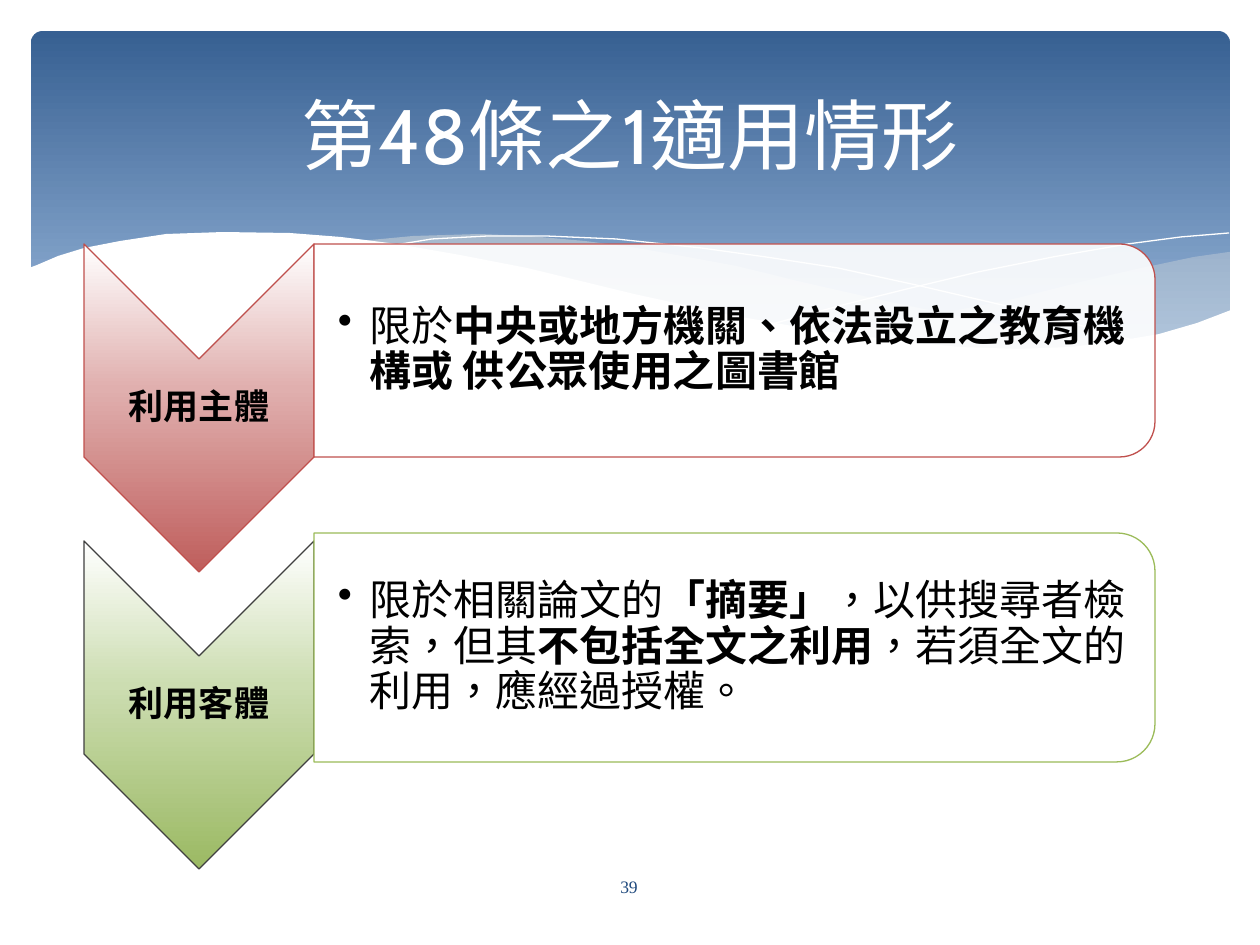
from lxml import etree
from pptx import Presentation
from pptx.dml.color import RGBColor
from pptx.enum.lang import MSO_LANGUAGE_ID
from pptx.enum.shapes import MSO_SHAPE
from pptx.enum.text import MSO_ANCHOR, PP_ALIGN
from pptx.oxml.ns import qn
from pptx.util import Emu, Pt

EMU_PER_PX = 914400 / 126
ROUND_RECT = MSO_SHAPE.ROUNDED_RECTANGLE
CHEVRON = MSO_SHAPE.CHEVRON
CARD = MSO_SHAPE.ROUND_2_SAME_RECTANGLE
MIDDLE = MSO_ANCHOR.MIDDLE
LEFT, CENTER = PP_ALIGN.LEFT, PP_ALIGN.CENTER
CHINESE = MSO_LANGUAGE_ID.TRADITIONAL_CHINESE

WHITE = RGBColor(0xFF, 0xFF, 0xFF)
BLACK = RGBColor(0x00, 0x00, 0x00)
NAVY = RGBColor(0x1F, 0x49, 0x7D)
BANNER_DARK = RGBColor(0x37, 0x60, 0x92)
BANNER_LIGHT = RGBColor(0x95, 0xB3, 0xD7)
CREAM = RGBColor(0xEE, 0xEC, 0xE1)
RED = RGBColor(0xC0, 0x50, 0x4D)
RED_MID = RGBColor(0xE0, 0xAF, 0xAE)
RED_DEEP = RGBColor(0xBF, 0x5E, 0x5C)
GREEN = RGBColor(0x9B, 0xBB, 0x59)
GREEN_MID = RGBColor(0xCC, 0xDD, 0xB1)
GREEN_DEEP = RGBColor(0x9B, 0xB9, 0x63)
CHARCOAL = RGBColor(0x40, 0x40, 0x40)

RIGHT_WAVE = [
    (1229, 252), (1194, 257), (1142, 268), (1085, 281), (1014, 299), (949, 312),
    (890, 324), (833, 334), (871, 339), (922, 345), (984, 349), (1052, 350),
    (1110, 344), (1160, 334), (1196, 324), (1230, 311), (1230, 252)]
MIDDLE_WAVE = [
    (1125, 344), (1055, 334), (976, 320), (890, 302), (793, 280), (736, 266),
    (682, 256), (631, 247), (585, 241), (529, 236), (479, 234), (413, 236),
    (360, 241), (431, 251), (509, 266), (566, 280), (668, 302), (757, 321),
    (838, 335), (910, 345), (989, 350), (1043, 351), (1092, 348)]
FALLING_CURVE = [
    (389, 246), (432, 239), (488, 236), (546, 236), (616, 239), (701, 248),
    (766, 257), (838, 268), (916, 285), (1002, 305), (1094, 329), (1143, 343)]
RISING_CURVE = [
    (772, 324), (847, 304), (907, 289), (978, 272), (1053, 257), (1128, 244),
    (1181, 237), (1229, 233)]
WHITE_WAVE = [
    (1231, 310), (1197, 323), (1159, 334), (1118, 341), (1071, 347), (1019, 349),
    (959, 347), (892, 340), (815, 330), (730, 315), (634, 294), (527, 268),
    (460, 255), (397, 244), (341, 237), (290, 233), (223, 232), (166, 234),
    (120, 241), (84, 248), (58, 256), (37, 265), (29, 268), (29, 415), (1231, 415)]


def px(length):
    """Turn pixels into EMU."""
    return Emu(round(length * EMU_PER_PX))


def set_solid(shape, color, opacity=100):
    """Fill a shape with one colour at a percentage of opacity."""
    shape.fill.solid()
    shape.fill.fore_color.rgb = color
    if opacity < 100:
        color_element = shape.element.spPr.find(qn("a:solidFill"))[0]
        etree.SubElement(color_element, qn("a:alpha"), val=str(opacity * 1000))


def set_gradient(shape, stops):
    """Fill a shape with a gradient that runs from top to bottom."""
    shape.fill.gradient()
    gradient = shape.element.spPr.find(qn("a:gradFill"))
    gradient.set("rotWithShape", "0")
    gradient.find(qn("a:lin")).set("ang", "5400000")
    stop_list = gradient.find(qn("a:gsLst"))
    for stop in list(stop_list):
        stop_list.remove(stop)
    for position, color in stops:
        stop = etree.SubElement(stop_list, qn("a:gs"), pos=str(position * 1000))
        etree.SubElement(stop, qn("a:srgbClr"), val=str(color))


def set_outline(shape, color=None, width=0.75):
    """Give a shape an outline, or none, and no shadow."""
    shape.shadow.inherit = False
    if color is None:
        shape.line.fill.background()
    else:
        shape.line.color.rgb = color
        shape.line.width = Pt(width)


def add_turned_shape(slide, kind, left, top, width, height):
    """Add a shape turned by 90 degrees that covers the given area."""
    shift = (width - height) / 2
    shape = slide.shapes.add_shape(
        kind, px(left + shift), px(top - shift), px(height), px(width))
    shape.rotation = 90
    return shape


def add_outline_path(slide, points, closed):
    """Add a freeform through the points."""
    builder = slide.shapes.build_freeform(*points[0], scale=EMU_PER_PX)
    builder.add_line_segments(points[1:], close=closed)
    return builder.convert_to_shape()


def add_wave(slide, points, color, opacity=100):
    """Add a filled wave."""
    wave = add_outline_path(slide, points, True)
    set_solid(wave, color, opacity)
    set_outline(wave)


def add_curve(slide, points):
    """Add a white hairline curve."""
    curve = add_outline_path(slide, points, False)
    curve.fill.background()
    set_outline(curve, WHITE, 0)


def write_text(shape, runs, size, color, align=CENTER, font="Cabin", spacing=None):
    """Write one paragraph of (text, bold) runs and return it."""
    frame = shape.text_frame
    frame.word_wrap = True
    frame.vertical_anchor = MIDDLE
    paragraph = frame.paragraphs[0]
    paragraph.alignment = align
    paragraph.line_spacing = spacing
    for text, bold in runs:
        run = paragraph.add_run()
        run.text = text
        run.font.name = font
        run.font.size = Pt(size)
        run.font.bold = bold
        run.font.color.rgb = color
        run.font.language_id = CHINESE
    return paragraph


def add_text_box(slide, left, top, width, height, insets):
    """Add a text box with left, top, right and bottom insets."""
    box = slide.shapes.add_textbox(px(left), px(top), px(width), px(height))
    frame = box.text_frame
    (frame.margin_left, frame.margin_top,
     frame.margin_right, frame.margin_bottom) = map(px, insets)
    return box


def add_bullet(paragraph):
    """Give a paragraph a hanging round bullet."""
    properties = paragraph._p.get_or_add_pPr()
    properties.set("marL", "228600")
    properties.set("indent", "-228600")
    etree.SubElement(properties, qn("a:buChar"), char="•")


def add_chevron(slide, top, label, stops, line_color):
    """Add a labelled chevron that points down."""
    chevron = add_turned_shape(slide, CHEVRON, 84, top, 230, 328)
    set_gradient(chevron, stops)
    set_outline(chevron, line_color)
    box = add_text_box(slide, 84, top + 115, 230, 98, (1, 1, 1, 1))
    write_text(box, [(label, True)], 20, BLACK, spacing=0.9)


def add_card(slide, top, height, runs, line_color):
    """Add a card, rounded on the right, with one bullet."""
    card = add_turned_shape(slide, CARD, 314, top, 841, height)
    set_solid(card, WHITE, 90)
    set_outline(card, line_color)
    box = add_text_box(slide, 314, top + 10, 830, height - 20, (24, 2, 2, 2))
    add_bullet(write_text(box, runs, 24, BLACK, LEFT, spacing=0.9))


def add_banner(slide):
    """Add the blue banner with its waves."""
    banner = slide.shapes.add_shape(ROUND_RECT, px(31), px(31), px(1199), px(340))
    banner.adjustments[0] = 0.034
    set_gradient(banner, [(0, BANNER_DARK), (90, BANNER_LIGHT)])
    set_outline(banner)
    add_wave(slide, RIGHT_WAVE, CREAM, 29)
    add_wave(slide, MIDDLE_WAVE, CREAM, 40)
    add_curve(slide, FALLING_CURVE)
    add_curve(slide, RISING_CURVE)
    add_wave(slide, WHITE_WAVE, WHITE)


def add_title(slide, text):
    """Place the title in front of the banner."""
    title = slide.shapes.title
    title.left, title.top, title.width, title.height = map(px, (63, 47, 1134, 173))
    write_text(title, [(text, False)], 44, WHITE)
    title.element.getparent().append(title.element)


def main():
    """Build and save the slide."""
    presentation = Presentation()
    presentation.slide_width, presentation.slide_height = px(1260), px(945)
    slide = presentation.slides.add_slide(presentation.slide_layouts[5])
    add_banner(slide)
    add_chevron(slide, 244, "利用主體", [(0, WHITE), (44, RED_MID), (100, RED_DEEP)], RED)
    add_card(slide, 244, 213, [
        ("限於", False), ("中央或地方機關、依法設立之教育機構或 供公眾使用之圖書館", True)], RED)
    add_chevron(slide, 541, "利用客體",
                [(0, WHITE), (44, GREEN_MID), (100, GREEN_DEEP)], CHARCOAL)
    add_card(slide, 533, 229, [
        ("限於相關論文的", False), ("「摘要」", True), ("，以供搜尋者檢索，但其", False),
        ("不包括全文之利用", True), ("，若須全文的利用，應經過授權。", False)], GREEN)
    add_title(slide, "第48條之1適用情形")
    number = add_text_box(slide, 549, 862, 160, 50, (13, 6, 13, 6))
    write_text(number, [("39", False)], 10, NAVY, font="Times New Roman")
    presentation.save("out.pptx")


if __name__ == "__main__":
    main()
